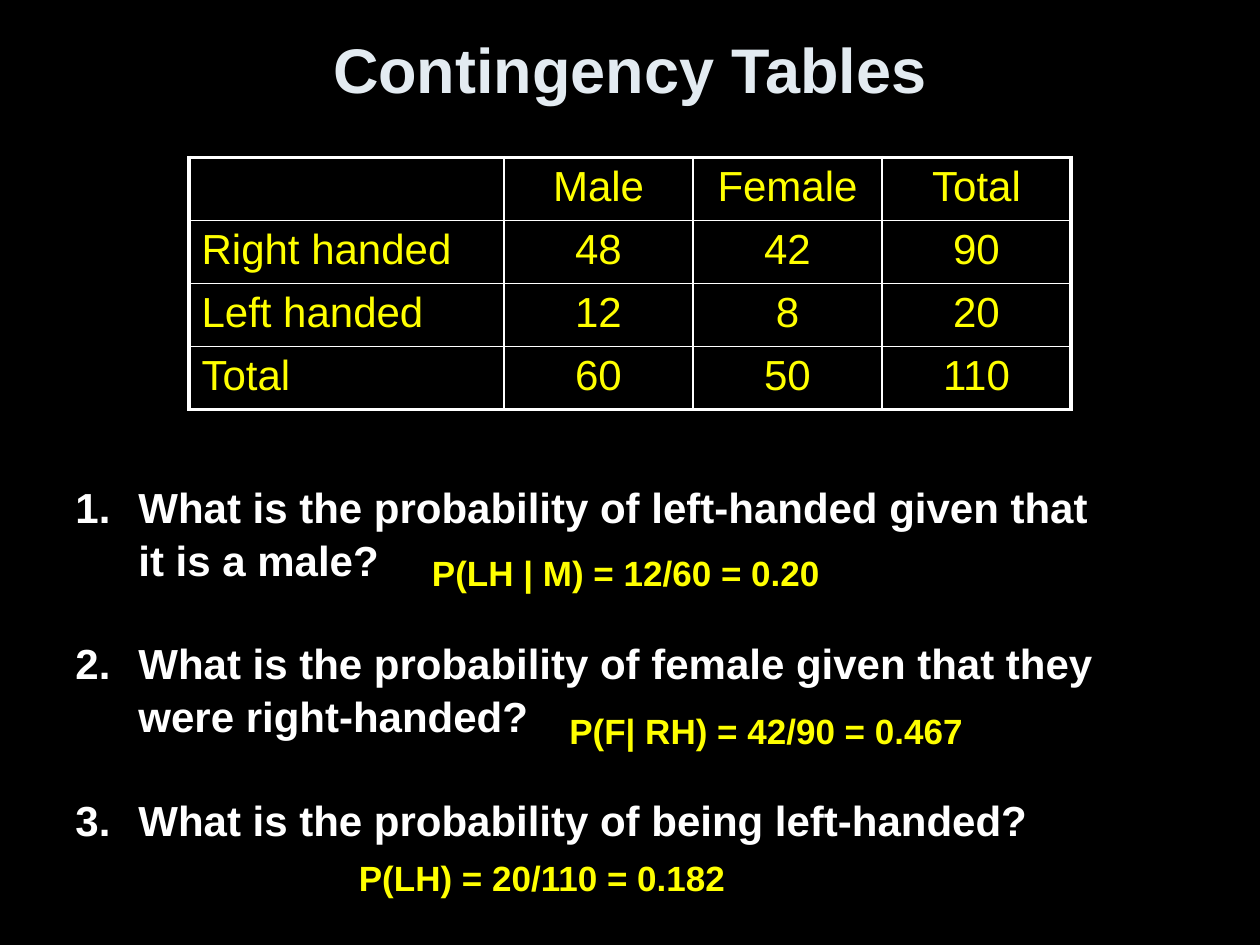
from dataclasses import dataclass

from lxml import etree
from pptx import Presentation
from pptx.dml.color import RGBColor
from pptx.enum.text import MSO_ANCHOR, PP_ALIGN
from pptx.oxml.ns import qn
from pptx.util import Inches, Pt

LEFT, CENTER = PP_ALIGN.LEFT, PP_ALIGN.CENTER
TOP, MIDDLE = MSO_ANCHOR.TOP, MSO_ANCHOR.MIDDLE


@dataclass(frozen=True)
class Theme:
    font: str = "Arial"
    background: str = "000000"
    title: str = "E3EBF1"
    body: str = "FFFFFF"
    accent: str = "FFFF00"
    border: str = "FFFFFF"
    title_size: float = 36
    body_size: float = 24
    answer_size: float = 20
    outer_line: float = 2.25
    inner_line: float = 1


THEME = Theme()
COUNTS = [
    ["", "Male", "Female", "Total"],
    ["Right handed", "48", "42", "90"],
    ["Left handed", "12", "8", "20"],
    ["Total", "60", "50", "110"],
]
COLUMN_WIDTHS = [2.5, 1.5, 1.5, 1.5]
ROW_HEIGHTS = [0.48, 0.5, 0.5, 0.48]
QUESTIONS = [
    "What is the probability of left-handed given that \vit is a male?",
    "What is the probability of female given that they were right-handed?",
    "What is the probability of being left-handed?",
]
ANSWERS = [
    ("P(LH | M) = 12/60 = 0.20", (3.33, 4.33, 5.92, 0.44)),
    ("P(F| RH) = 42/90 = 0.467", (4.42, 5.58, 4.33, 0.44)),
    ("P(LH) = 20/110 = 0.182", (2.75, 6.75, 4.33, 0.44)),
]


def style(para, size, color, bold=True, align=LEFT):
    para.alignment = align
    para.font.name = THEME.font
    para.font.size = Pt(size)
    para.font.bold = bold
    para.font.color.rgb = RGBColor.from_string(color)


def add_text_frame(page, box, anchor=TOP):
    frame = page.shapes.add_textbox(*map(Inches, box)).text_frame
    frame.word_wrap = True
    frame.vertical_anchor = anchor
    return frame


def add_line(page, box, text, size, color, align=LEFT, anchor=TOP):
    para = add_text_frame(page, box, anchor).paragraphs[0]
    para.text = text
    style(para, size, color, align=align)


def set_borders(cell, outer_edges):
    properties = cell._tc.get_or_add_tcPr()
    for side, outer in zip("LRTB", outer_edges):
        width = THEME.outer_line if outer else THEME.inner_line
        line = etree.SubElement(properties, qn(f"a:ln{side}"), w=str(Pt(width)))
        fill = etree.SubElement(line, qn("a:solidFill"))
        etree.SubElement(fill, qn("a:srgbClr"), val=THEME.border)


def add_contingency_table(page, box):
    row_count, column_count = len(COUNTS), len(COLUMN_WIDTHS)
    table = page.shapes.add_table(row_count, column_count, *map(Inches, box)).table
    table.first_row = table.horz_banding = False
    for column, width in zip(table.columns, COLUMN_WIDTHS):
        column.width = Inches(width)
    for row, height in zip(table.rows, ROW_HEIGHTS):
        row.height = Inches(height)
    for r, values in enumerate(COUNTS):
        for c, value in enumerate(values):
            cell = table.cell(r, c)
            set_borders(cell, (c == 0, c == column_count - 1, r == 0, r == row_count - 1))
            cell.fill.background()
            cell.text = value
            style(cell.text_frame.paragraphs[0], THEME.body_size, THEME.accent,
                  bold=False, align=CENTER if c else LEFT)


def add_questions(page, box):
    frame = add_text_frame(page, box)
    for index, question in enumerate(QUESTIONS):
        para = frame.add_paragraph() if index else frame.paragraphs[0]
        para.text = question
        properties = para._p.get_or_add_pPr()
        properties.set("marL", str(Inches(0.5)))
        properties.set("indent", str(Inches(-0.5)))
        etree.SubElement(properties, qn("a:buFont"), typeface=THEME.font)
        etree.SubElement(properties, qn("a:buAutoNum"), type="arabicPeriod")
        style(para, THEME.body_size, THEME.body)
        para.line_spacing = 1.05
        if index:
            para.space_before = Pt(29)


def build_slide(deck):
    page = deck.slides.add_slide(deck.slide_layouts[6])
    page.background.fill.solid()
    page.background.fill.fore_color.rgb = RGBColor.from_string(THEME.background)
    add_line(page, (0.5, 0.11, 9, 0.87), "Contingency Tables",
             THEME.title_size, THEME.title, CENTER, MIDDLE)
    add_contingency_table(page, (1.5, 1.25, sum(COLUMN_WIDTHS), sum(ROW_HEIGHTS)))
    add_questions(page, (0.5, 3.75, 8.95, 2.93))
    for text, box in ANSWERS:
        add_line(page, box, text, THEME.answer_size, THEME.accent)


def main():
    deck = Presentation()
    deck.slide_width, deck.slide_height = Inches(10), Inches(7.5)
    build_slide(deck)
    deck.save("out.pptx")


if __name__ == "__main__":
    main()
